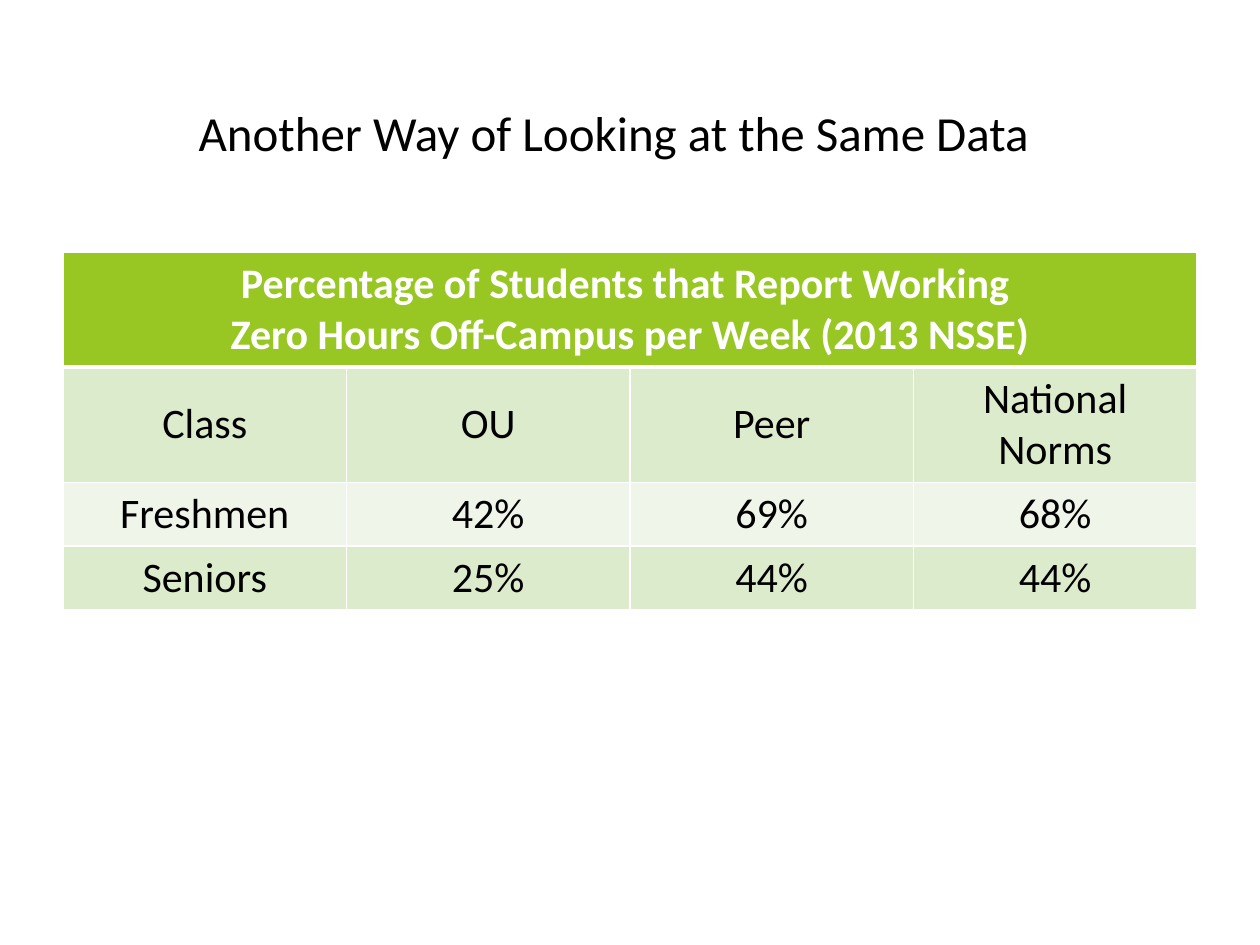
from dataclasses import dataclass

import pptx
import pptx.dml.color
import pptx.enum.text
import pptx.oxml
import pptx.oxml.ns
import pptx.table
import pptx.text.text
import pptx.util
from pptx.util import Inches


@dataclass(frozen=True)
class Theme:
    font: str = "Calibri"
    title_size: int = 28
    table_size: int = 24
    text: str = "000000"
    header_text: str = "FFFFFF"
    header_fill: str = "98C723"
    bands: tuple[str, str] = ("DDEBCD", "EFF5E8")
    border: str = "FFFFFF"
    thin: int = 1
    thick: int = 3


@dataclass(frozen=True)
class TextStyle:
    size: int
    color: str
    bold: bool = False


THEME = Theme()
TITLE_STYLE = TextStyle(THEME.title_size, THEME.text)
HEADER_STYLE = TextStyle(THEME.table_size, THEME.header_text, True)
BODY_STYLE = TextStyle(THEME.table_size, THEME.text)

TITLE = "Another Way of Looking at the Same Data"
HEADER_LINES = [
    "Percentage of Students that Report Working ",
    "Zero Hours Off-Campus per Week (2013 NSSE)",
]
BODY_ROWS = [
    ["Class", "OU", "Peer", "National Norms"],
    ["Freshmen", "42%", "69%", "68%"],
    ["Seniors", "25%", "44%", "44%"],
]


def write_lines(
    frame: pptx.text.text.TextFrame, lines: list[str], style: TextStyle
) -> None:
    """Write each line as a centred paragraph."""
    for index, line in enumerate(lines):
        paragraph = frame.add_paragraph() if index else frame.paragraphs[0]
        paragraph.alignment = pptx.enum.text.PP_ALIGN.CENTER
        run = paragraph.add_run()
        run.text = line
        run.font.name = THEME.font
        run.font.size = pptx.util.Pt(style.size)
        run.font.bold = style.bold
        run.font.color.rgb = pptx.dml.color.RGBColor.from_string(style.color)


def style_cell(
    cell: pptx.table._Cell, fill: str, top: int, bottom: int
) -> None:
    """Set borders before the fill, as the schema orders them."""
    cell.vertical_anchor = pptx.enum.text.MSO_ANCHOR.MIDDLE
    properties = cell._tc.get_or_add_tcPr()
    widths = {"L": THEME.thin, "R": THEME.thin, "T": top, "B": bottom}
    for side, width in widths.items():
        properties.append(pptx.oxml.parse_xml(
            f'<a:ln{side} {pptx.oxml.ns.nsdecls("a")} w="{pptx.util.Pt(width)}">'
            f'<a:solidFill><a:srgbClr val="{THEME.border}"/></a:solidFill>'
            f"</a:ln{side}>"
        ))
    cell.fill.solid()
    cell.fill.fore_color.rgb = pptx.dml.color.RGBColor.from_string(fill)


def add_title(slide: pptx.slide.Slide) -> None:
    box = slide.shapes.add_textbox(
        Inches(0.08), Inches(0.17), Inches(9.58), Inches(1.75)
    )
    box.text_frame.word_wrap = True
    box.text_frame.vertical_anchor = pptx.enum.text.MSO_ANCHOR.MIDDLE
    write_lines(box.text_frame, [TITLE], TITLE_STYLE)


def add_hours_table(slide: pptx.slide.Slide) -> None:
    row_count, column_count = len(BODY_ROWS) + 1, len(BODY_ROWS[0])
    table = slide.shapes.add_table(
        row_count, column_count,
        Inches(0.5), Inches(2), Inches(9), Inches(0.41 * row_count),
    ).table

    for column in range(column_count):
        style_cell(table.cell(0, column), THEME.header_fill, THEME.thin, THEME.thick)
    table.cell(0, 0).merge(table.cell(0, column_count - 1))
    write_lines(table.cell(0, 0).text_frame, HEADER_LINES, HEADER_STYLE)

    for row, values in enumerate(BODY_ROWS, start=1):
        top = THEME.thick if row == 1 else THEME.thin
        for column, value in enumerate(values):
            cell = table.cell(row, column)
            style_cell(cell, THEME.bands[(row - 1) % 2], top, THEME.thin)
            write_lines(cell.text_frame, [value], BODY_STYLE)


def main() -> None:
    presentation = pptx.Presentation()
    presentation.slide_width = Inches(10)
    presentation.slide_height = Inches(7.5)
    slide = presentation.slides.add_slide(presentation.slide_layouts[6])
    add_hours_table(slide)
    add_title(slide)
    presentation.save("out.pptx")


if __name__ == "__main__":
    main()
